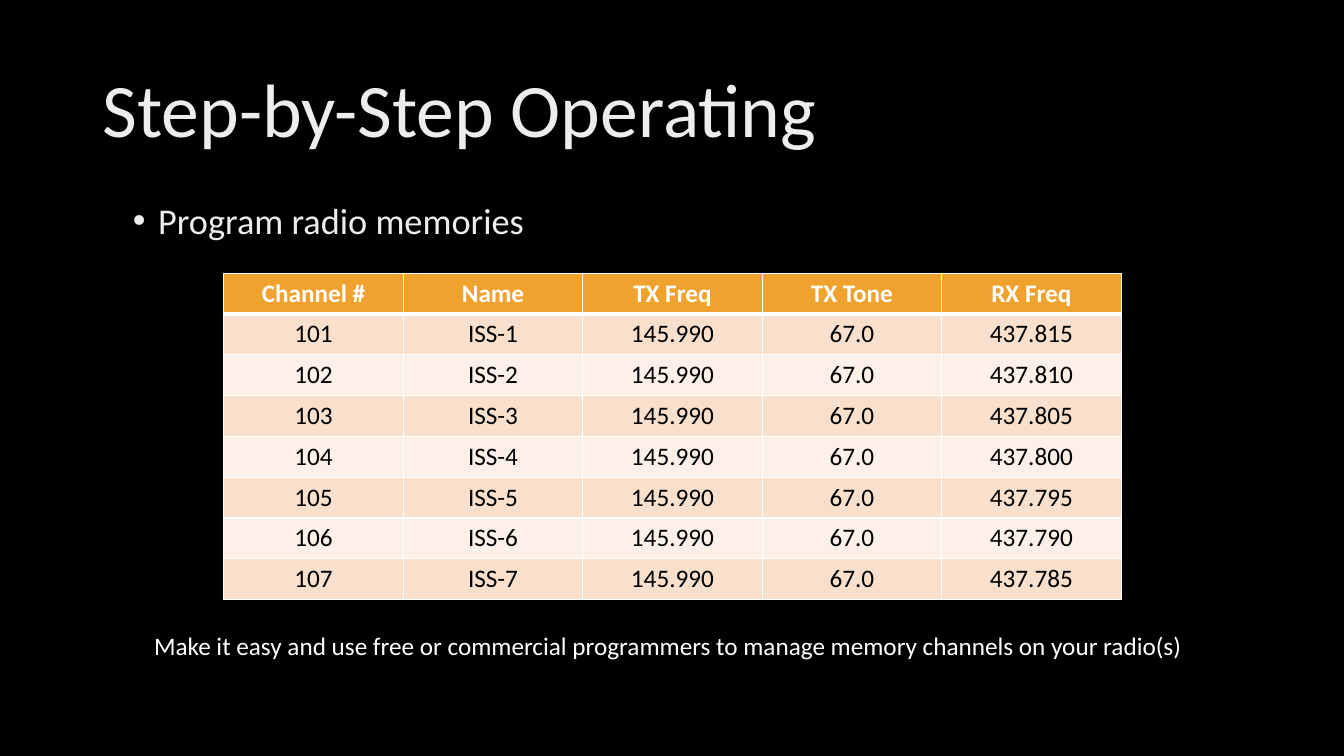
"""Build the radio memory programming slide with its channel table."""
from lxml import etree
from pptx import Presentation
from pptx.dml.color import RGBColor
from pptx.enum.text import MSO_ANCHOR, PP_ALIGN
from pptx.oxml.ns import qn
from pptx.util import Inches, Pt

TITLE = "Step-by-Step Operating"
BULLET = "Program radio memories"
FOOTNOTE = ("Make it easy and use free or commercial programmers "
            "to manage memory channels on your radio(s)")
HEADERS = ("Channel #", "Name", "TX Freq", "TX Tone", "RX Freq")
TX_FREQ, TX_TONE = "145.990", "67.0"
RX_FREQS = ("437.815", "437.810", "437.805", "437.800", "437.795", "437.790", "437.785")

FONT = "Calibri"
BLACK = RGBColor(0x00, 0x00, 0x00)
WHITE = RGBColor(0xFF, 0xFF, 0xFF)
SOFT_WHITE = RGBColor(0xED, 0xED, 0xED)
ORANGE = RGBColor(0xF0, 0xA2, 0x2E)
BANDS = (RGBColor(0xF9, 0xE0, 0xCD), RGBColor(0xFC, 0xF0, 0xE8))
CENTER = PP_ALIGN.CENTER
TOP, MIDDLE = MSO_ANCHOR.TOP, MSO_ANCHOR.MIDDLE
COLUMN_WIDTH, ROW_HEIGHT = Inches(1.78), Inches(0.405)


def style_runs(paragraph, size, color, bold=False):
    for run in paragraph.runs:
        run.font.name = FONT
        run.font.size = Pt(size)
        run.font.bold = bold
        run.font.color.rgb = color


def add_text(slide, box, text, size, color, anchor=TOP):
    shape = slide.shapes.add_textbox(*(Inches(length) for length in box))
    frame = shape.text_frame
    frame.word_wrap = True
    frame.vertical_anchor = anchor
    frame.text = text
    paragraph = frame.paragraphs[0]
    style_runs(paragraph, size, color)
    return paragraph


def add_bullet(paragraph):
    properties = paragraph._p.get_or_add_pPr()
    properties.set("marL", str(Inches(0.25)))
    properties.set("indent", str(-Inches(0.25)))
    etree.SubElement(properties, qn("a:buFont"), typeface="Arial")
    etree.SubElement(properties, qn("a:buChar"), char="•")


def add_borders(cell, widths):
    properties = cell._tc.get_or_add_tcPr()
    for side, width in widths.items():
        line = etree.SubElement(properties, qn(f"a:ln{side}"), w=str(Pt(width)))
        fill = etree.SubElement(line, qn("a:solidFill"))
        etree.SubElement(fill, qn("a:srgbClr"), val=str(WHITE))


def add_channel_table(slide):
    channels = [(str(100 + number), f"ISS-{number}", TX_FREQ, TX_TONE, rx_freq)
                for number, rx_freq in enumerate(RX_FREQS, 1)]
    rows = [HEADERS, *channels]
    table = slide.shapes.add_table(
        len(rows), len(HEADERS), Inches(2.22), Inches(2.71),
        COLUMN_WIDTH * len(HEADERS), ROW_HEIGHT * len(rows)).table
    for column in table.columns:
        column.width = COLUMN_WIDTH
    for row_index, values in enumerate(rows):
        table.rows[row_index].height = ROW_HEIGHT
        header = row_index == 0
        widths = {"L": 1, "R": 1, "T": 3 if row_index == 1 else 1, "B": 3 if header else 1}
        for column_index, value in enumerate(values):
            cell = table.cell(row_index, column_index)
            cell.text = value
            paragraph = cell.text_frame.paragraphs[0]
            paragraph.alignment = CENTER
            style_runs(paragraph, 18, WHITE if header else BLACK, header)
            add_borders(cell, widths)
            cell.fill.solid()
            cell.fill.fore_color.rgb = ORANGE if header else BANDS[(row_index - 1) % 2]


def main():
    presentation = Presentation()
    presentation.slide_width = Inches(13.33)
    presentation.slide_height = Inches(7.5)
    slide = presentation.slides.add_slide(presentation.slide_layouts[6])
    slide.background.fill.solid()
    slide.background.fill.fore_color.rgb = BLACK

    title = add_text(slide, (0.92, 0.4, 11.5, 1.45), TITLE, 54, SOFT_WHITE, MIDDLE)
    title.line_spacing = 0.9
    bullet = add_text(slide, (1.22, 2, 11.19, 0.47), BULLET, 25.9, SOFT_WHITE)
    add_bullet(bullet)
    bullet.line_spacing = 0.8
    add_channel_table(slide)
    add_text(slide, (1.43, 6.2, 10.77, 0.4), FOOTNOTE, 18, WHITE)
    presentation.save("out.pptx")


if __name__ == "__main__":
    main()
